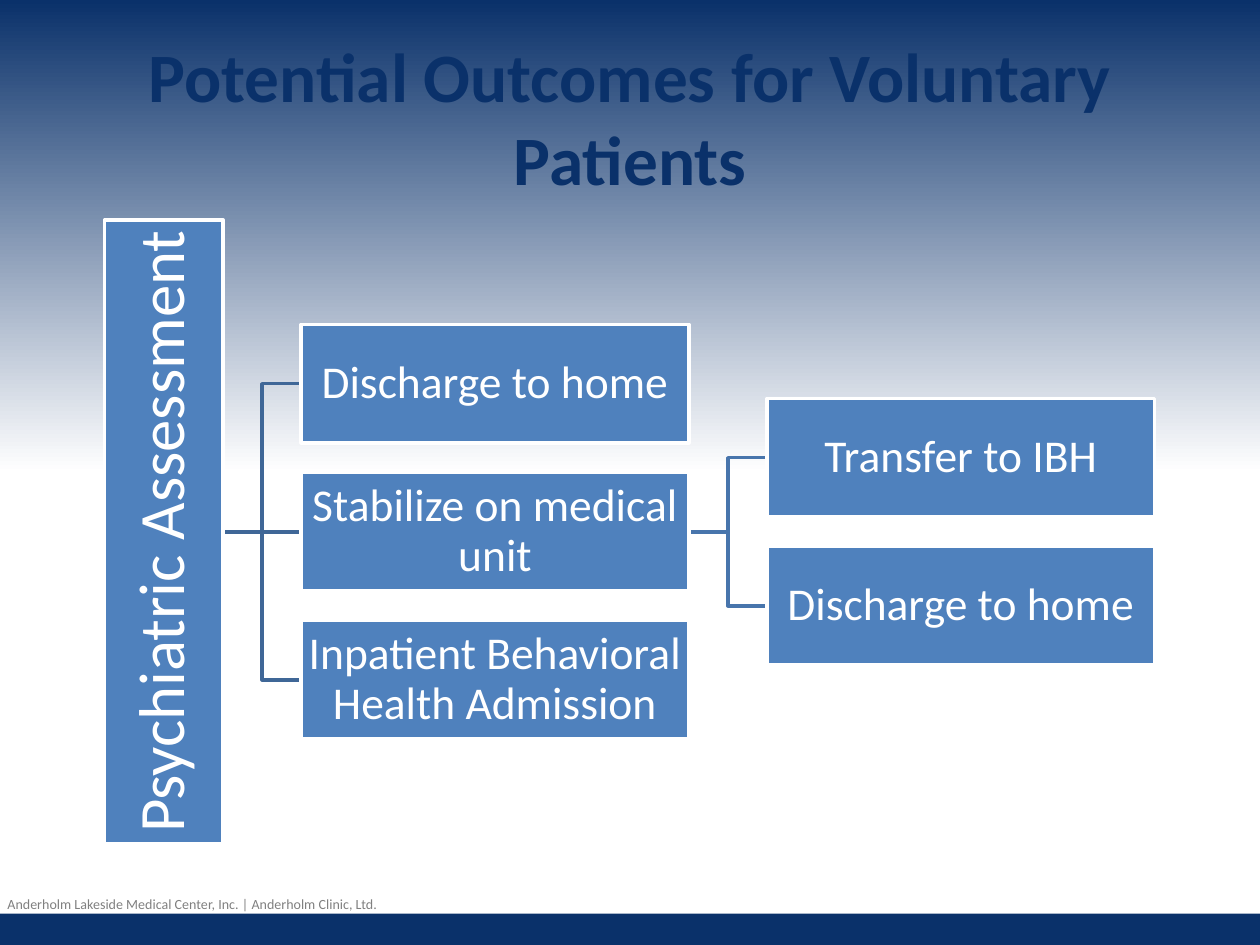
import pptx
import pptx.dml.color
import pptx.enum.shapes
import pptx.enum.text
import pptx.oxml
import pptx.util
from pptx.util import Cm

RGB = pptx.dml.color.RGBColor
ALIGN = pptx.enum.text.PP_ALIGN
ANCHOR = pptx.enum.text.MSO_ANCHOR
LINK = pptx.enum.shapes.MSO_CONNECTOR
RECT = pptx.enum.shapes.MSO_SHAPE.RECTANGLE

NAVY = RGB(0x0A, 0x31, 0x6A)
BLUE = RGB(0x4F, 0x81, 0xBD)
STEEL = RGB(0x3F, 0x67, 0x97)
AZURE = RGB(0x48, 0x75, 0xAC)
GREY = RGB(0x80, 0x80, 0x80)
WHITE = RGB(0xFF, 0xFF, 0xFF)
NO_FX = '<a:effectLst xmlns:a="http://schemas.openxmlformats.org/drawingml/2006/main"/>'

# Tree measures in centimetres
LEFT, MID = 2.11, 10.72
WIDE, HIGH, TALL = 7.82, 2.39, 12.57
GAP, PITCH = 1.57, 2.985


def write(frame, text, size, color, align=ALIGN.CENTER, bold=False,
          inset=None, space=None, wrap=True):
    frame.auto_size = pptx.enum.text.MSO_AUTO_SIZE.NONE
    frame.word_wrap = wrap
    frame.vertical_anchor = ANCHOR.MIDDLE
    if inset is not None:
        frame.margin_left = frame.margin_right = Cm(inset)
        frame.margin_top = frame.margin_bottom = Cm(inset)
    frame.text = text
    para = frame.paragraphs[0]
    para.alignment = align
    para.line_spacing = space
    font = para.runs[0].font
    font.name, font.size, font.bold = "Calibri", pptx.util.Pt(size), bold
    font.color.rgb = color


class Deck:
    font_size = 26
    line_width = pptx.util.Pt(2)

    def __init__(self):
        self.file = pptx.Presentation()
        self.file.slide_width, self.file.slide_height = Cm(25.4), Cm(19.05)
        self.slide = self.file.slides.add_slide(self.file.slide_layouts[5])
        self.shapes = self.slide.shapes

    def fade(self, top, end):
        """Fade the background from top to end at half height."""
        fill = self.slide.background.fill
        fill.gradient()
        fill.gradient_angle = 270
        for stop, color, place in zip(fill.gradient_stops, (top, end), (0, 0.5)):
            stop.color.rgb, stop.position = color, place

    def title(self, text):
        head = self.shapes.title
        head.left, head.top = Cm(1.27), Cm(0.76)
        head.width, head.height = Cm(22.86), Cm(3.18)
        write(head.text_frame, text, 39.6, NAVY, bold=True)

    def label(self, text, x, y, w, h):
        box = self.shapes.add_textbox(Cm(x), Cm(y), Cm(w), Cm(h))
        write(box.text_frame, text, 8, GREY, align=ALIGN.LEFT, wrap=False)

    def rect(self, x, y, w, h, color, edge=None):
        shape = self.shapes.add_shape(RECT, Cm(x), Cm(y), Cm(w), Cm(h))
        shape.shadow.inherit = False
        shape.fill.solid()
        shape.fill.fore_color.rgb = color
        if edge is None:
            shape.line.fill.background()
        else:
            shape.line.color.rgb = edge
            shape.line.width = self.line_width
        return shape

    def node(self, text, x, mid, w=WIDE, h=HIGH, size=font_size, turn=False):
        """Add a tree box centred on height mid; turn makes its text read upwards."""
        box = self.rect(x, mid - h / 2, w, h, BLUE, WHITE)
        write(box.text_frame, text, size, WHITE, inset=0.05, space=0.9)
        if turn:
            box.text_frame._txBody.bodyPr.set("vert", "vert270")
        return box

    def join(self, start, end, color):
        level = abs(start.top + start.height / 2 - end.top - end.height / 2) < Cm(0.05)
        kind = LINK.STRAIGHT if level else LINK.ELBOW
        line = self.shapes.add_connector(kind, 0, 0, 0, 0)
        line.begin_connect(start, 3)
        line.end_connect(end, 1)
        line.line.color.rgb = color
        line.line.width = self.line_width
        line.element.spPr.append(pptx.oxml.parse_xml(NO_FX))
        self.shapes.element.insert(2, line.element)  # behind the boxes

    def branch(self, root, names, x, color):
        """Stack named boxes around the midline and join each to the root."""
        first = MID - PITCH * (len(names) - 1) / 2
        nodes = [self.node(name, x, first + i * PITCH) for i, name in enumerate(names)]
        for node in nodes:
            self.join(root, node, color)
        return nodes


def main():
    deck = Deck()
    deck.fade(NAVY, WHITE)
    deck.rect(0, 18.42, 25.4, 0.63, NAVY)
    deck.label("Anderholm Lakeside Medical Center, Inc. | Anderholm Clinic, Ltd.",
               -0.1, 17.91, 8.08, 0.61)
    deck.title("Potential Outcomes for Voluntary Patients")

    root = deck.node("Psychiatric Assessment", LEFT, MID, HIGH, TALL, 37, turn=True)
    near = LEFT + HIGH + GAP
    far = near + WIDE + GAP
    paths = deck.branch(root, ["Discharge to home", "Stabilize on medical unit",
                               "Inpatient Behavioral Health Admission"], near, STEEL)
    deck.branch(paths[1], ["Transfer to IBH", "Discharge to home"], far, AZURE)
    deck.file.save("out.pptx")


if __name__ == "__main__":
    main()
